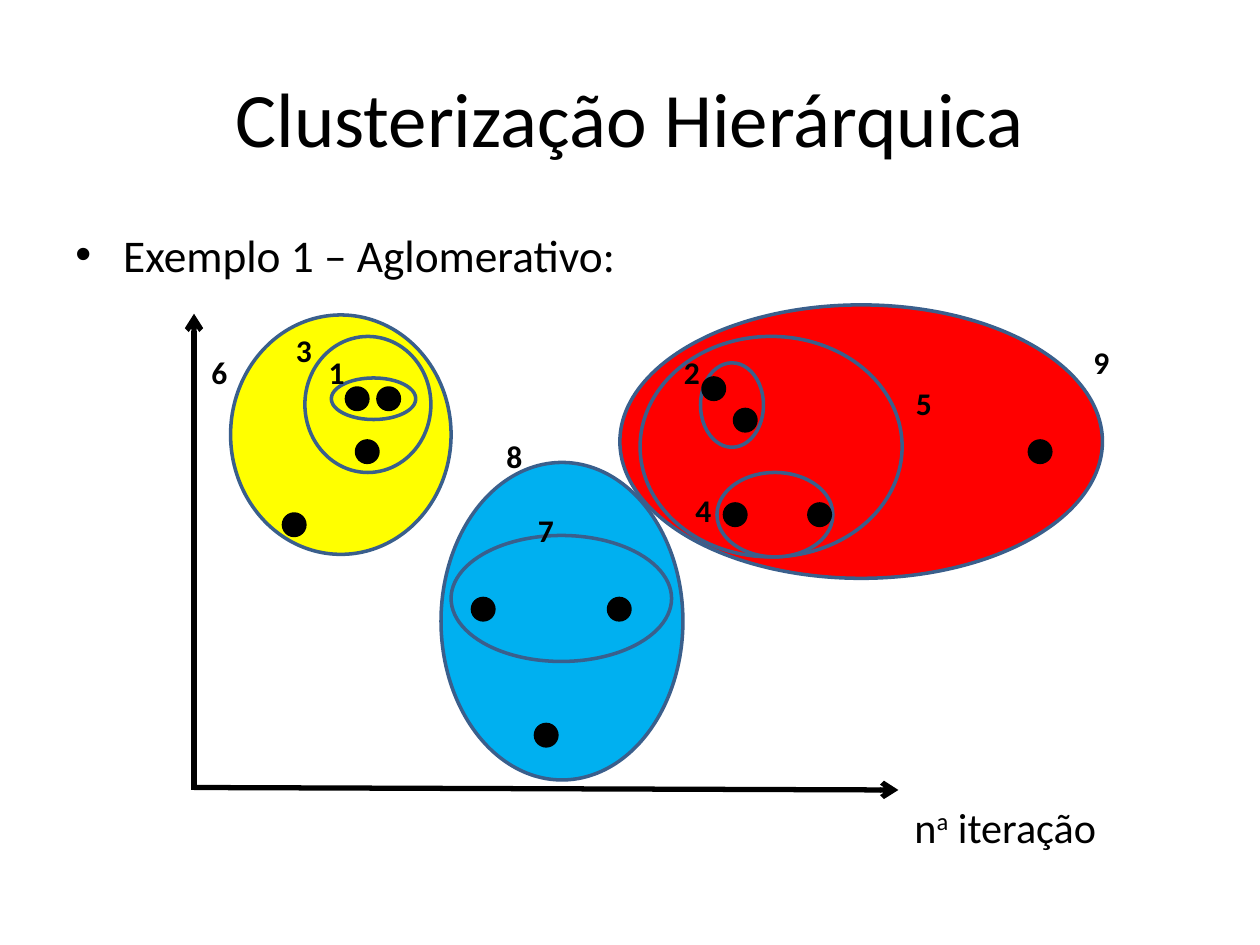
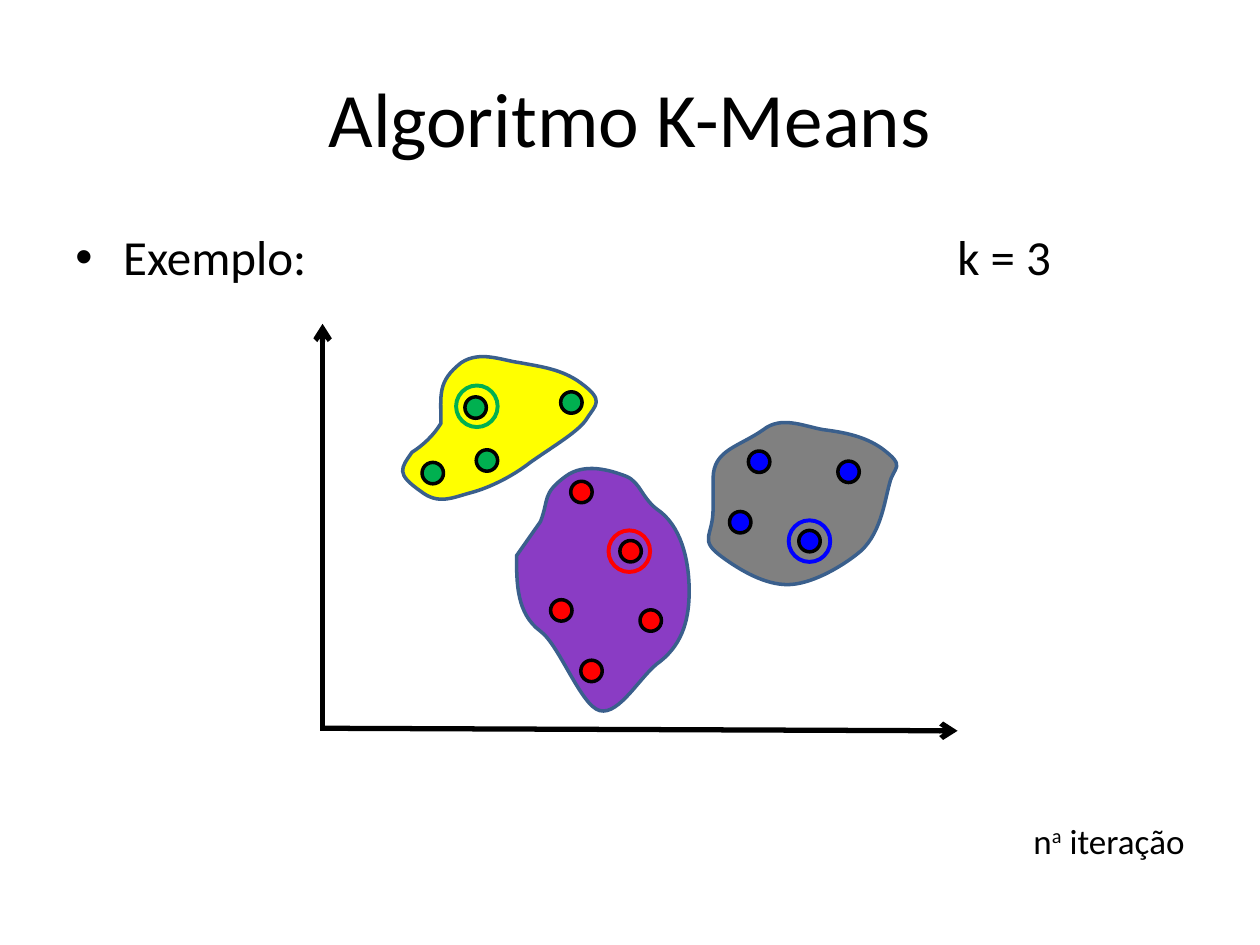
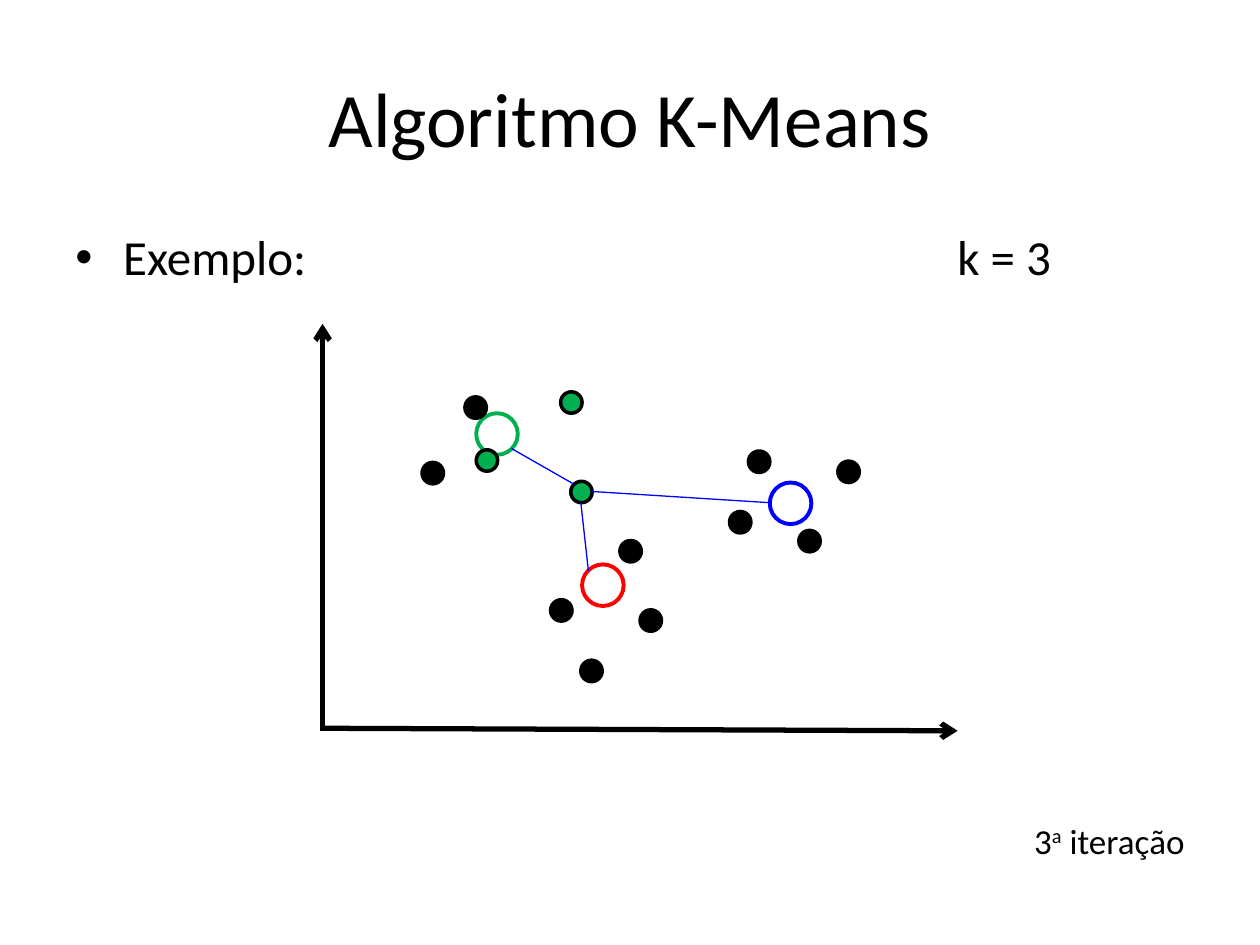
from lxml import etree
from pptx import Presentation
from pptx.dml.color import RGBColor
from pptx.enum.shapes import MSO_CONNECTOR, MSO_SHAPE
from pptx.enum.text import MSO_ANCHOR, PP_ALIGN
from pptx.oxml.ns import qn
from pptx.util import Inches, Pt

STRAIGHT = MSO_CONNECTOR.STRAIGHT
OVAL = MSO_SHAPE.OVAL
LEFT, CENTER, RIGHT = PP_ALIGN.LEFT, PP_ALIGN.CENTER, PP_ALIGN.RIGHT
TOP, MIDDLE = MSO_ANCHOR.TOP, MSO_ANCHOR.MIDDLE

FONT = "Calibri"
BLACK, YELLOW, SKY, RED = "000000", "FFFF00", "00B0F0", "FF0000"
GREEN, BLUE, GRAY, PURPLE = "00B050", "0000FF", "808080", "8A3CC4"
OUTLINE = "3A5F8C"
DOT, RING = 0.17, 0.33

CLUSTERS = [
    (3.5, 3.67, 1.92, 2.52, SKY),
    (3.58, 4.25, 1.75, 1, SKY),
    (4.92, 2.42, 3.83, 2.17, RED),
    (5.08, 2.67, 2.08, 1.75, RED),
    (1.83, 2.5, 1.75, 1.9, YELLOW),
    (5.69, 3.75, 0.92, 0.67, RED),
    (2.42, 2.67, 1, 1.08, YELLOW),
    (5.56, 2.88, 0.5, 0.67, RED),
    (2.63, 3, 0.67, 0.33, YELLOW),
]
HIERARCHY_DOTS = [
    (2.75, 3.08), (3, 3.08), (2.83, 3.5), (2.25, 4.08), (5.58, 3), (5.83, 3.25),
    (5.75, 4), (6.42, 4), (3.75, 4.75), (8.17, 3.5), (4.83, 4.75), (4.25, 5.75),
]
MERGE_LABELS = [
    ("1", 2.51, 2.75), ("2", 5.33, 2.75), ("3", 2.25, 2.58),
    ("4", 5.42, 3.85), ("9", 8.58, 2.67), ("5", 7.17, 3),
    ("7", 4.17, 4.01), ("8", 3.92, 3.42), ("6", 1.58, 2.75),
]

KMEANS_DOTS = {
    GREEN: [(3.69, 3.15), (4.45, 3.11), (3.78, 3.57), (3.35, 3.67)],
    RED: [(4.92, 4.29), (4.37, 4.76), (4.53, 3.82), (4.61, 5.24), (5.08, 4.84)],
    BLUE: [(6.34, 4.21), (5.79, 4.06), (5.94, 3.58), (6.65, 3.66)],
}
FIRST_CENTROIDS = {GREEN: (3.62, 3.06), RED: (4.83, 4.21), BLUE: (6.26, 4.13)}
THIRD_CENTROIDS = {GREEN: (3.78, 3.28), RED: (4.62, 4.48), BLUE: (6.11, 3.83)}
ASSIGNED_DOTS = [(4.45, 3.11), (3.78, 3.57), (4.53, 3.82)]
DISTANCES = [
    (4.67, 4.53, 4.61, 3.99),
    (6.11, 3.99, 4.69, 3.9),
    (4.06, 3.56, 4.55, 3.84),
]

REGIONS = [
    (YELLOW, (3.5, 3.36), [
        ((3.5, 3.13), (3.47, 3.03), (3.66, 2.88)),
        ((3.81, 2.78), (3.98, 2.86), (4.13, 2.88)),
        ((4.29, 2.91), (4.46, 2.93), (4.61, 3.04)),
        ((4.8, 3.18), (4.73, 3.21), (4.66, 3.32)),
        ((4.6, 3.42), (4.41, 3.53), (4.21, 3.67)),
        ((4.07, 3.78), (3.89, 3.87), (3.74, 3.91)),
        ((3.59, 3.95), (3.48, 4.01), (3.34, 3.9)),
        ((3.14, 3.76), (3.18, 3.72), (3.27, 3.59)),
        ((3.35, 3.54), (3.44, 3.46), (3.5, 3.36)),
    ]),
    (GRAY, (5.66, 3.8), [
        ((5.66, 3.57), (5.86, 3.55), (6.06, 3.41)),
        ((6.2, 3.3), (6.37, 3.38), (6.53, 3.41)),
        ((6.69, 3.43), (6.86, 3.46), (7, 3.56)),
        ((7.2, 3.71), (7.09, 3.7), (7.06, 3.84)),
        ((7.02, 3.98), (6.99, 4.26), (6.8, 4.4)),
        ((6.66, 4.51), (6.43, 4.64), (6.25, 4.64)),
        ((6.07, 4.64), (5.88, 4.53), (5.73, 4.42)),
        ((5.54, 4.28), (5.66, 4.26), (5.66, 4.04)),
    ]),
    (PURPLE, (4.29, 4.14), [
        ((4.36, 3.96), (4.3, 3.92), (4.49, 3.78)),
        ((4.64, 3.67), (4.84, 3.73), (4.97, 3.78)),
        ((5.09, 3.83), (5.09, 3.96), (5.24, 4.06)),
        ((5.43, 4.21), (5.47, 4.5), (5.47, 4.69)),
        ((5.47, 4.89), (5.43, 5.1), (5.24, 5.25)),
        ((5.09, 5.35), (4.92, 5.68), (4.76, 5.64)),
        ((4.61, 5.6), (4.44, 5.12), (4.29, 5.01)),
        ((4.1, 4.87), (4.1, 4.63), (4.1, 4.41)),
    ]),
]


def rgb(color):
    return RGBColor.from_string(color)


class Deck:
    def __init__(self):
        self.prs = Presentation()
        self.prs.slide_width, self.prs.slide_height = Inches(10), Inches(7.5)
        self.s = None

    def slide(self, title):
        self.s = self.prs.slides.add_slide(self.prs.slide_layouts[6])
        self.text(title, 0.5, 0.3, 9, 1.25, 44, align=CENTER, anchor=MIDDLE)

    def text(self, text, x, y, w, h, size, align=LEFT, anchor=TOP, bold=False):
        sp = self.s.shapes.add_textbox(Inches(x), Inches(y), Inches(w), Inches(h))
        tf = sp.text_frame
        tf.word_wrap = True
        tf.vertical_anchor = anchor
        p = tf.paragraphs[0]
        p.alignment = align
        self.run(p, text, size, bold)
        return tf

    def run(self, p, text, size, bold=False):
        r = p.add_run()
        r.text = text
        r.font.name, r.font.size, r.font.bold = FONT, Pt(size), bold
        r.font.color.rgb = rgb(BLACK)
        return r

    def body(self, lead, lead_size, number, size, gap, align=LEFT, margin=0):
        tf = self.text(lead, 0.5, 1.75, 9, 4.95, lead_size)
        pPr = tf.paragraphs[0]._p.get_or_add_pPr()
        pPr.set("marL", str(Inches(0.38)))
        pPr.set("indent", str(Inches(-0.38)))
        etree.SubElement(pPr, qn("a:buFont")).set("typeface", "Arial")
        etree.SubElement(pPr, qn("a:buChar")).set("char", "•")
        if "\t" in lead:
            tab = etree.SubElement(etree.SubElement(pPr, qn("a:tabLst")), qn("a:tab"))
            tab.set("pos", str(Inches(7)))
            tab.set("algn", "l")
        p = tf.add_paragraph()
        p.alignment = align
        p.space_before = Pt(gap)
        p._p.get_or_add_pPr().set("marL", str(Inches(margin)))
        self.run(p, number, size)
        ordinal = self.run(p, "a", size)
        ordinal._r.get_or_add_rPr().set("baseline", "30000")
        self.run(p, " iteração", size)

    def paint(self, sp, fill, line, weight):
        sp.shadow.inherit = False
        if fill:
            sp.fill.solid()
            sp.fill.fore_color.rgb = rgb(fill)
        else:
            sp.fill.background()
        sp.line.color.rgb = rgb(line)
        sp.line.width = Pt(weight)

    def ellipse(self, x, y, w, h, fill, line=OUTLINE, weight=2):
        sp = self.s.shapes.add_shape(OVAL, Inches(x), Inches(y), Inches(w), Inches(h))
        self.paint(sp, fill, line, weight)

    def dot(self, x, y, fill=BLACK):
        self.ellipse(x, y, DOT, DOT, fill, BLACK)

    def rings(self, centroids):
        for color, (x, y) in centroids.items():
            self.ellipse(x, y, RING, RING, None, color, 2.25)

    def region(self, fill, start, curves):
        builder = self.s.shapes.build_freeform(Inches(start[0]), Inches(start[1]))
        points = [(Inches(x), Inches(y)) for curve in curves for x, y in curve]
        builder.add_line_segments(points, close=True)
        sp = builder.convert_to_shape()
        segments = list(sp._element.iter(qn("a:lnTo")))
        for i in range(0, len(points), 3):
            curve = etree.Element(qn("a:cubicBezTo"))
            segments[i].addprevious(curve)
            for segment in segments[i:i + 3]:
                curve.append(segment[0])
                segment.getparent().remove(segment)
        self.paint(sp, fill, OUTLINE, 2)

    def line(self, x1, y1, x2, y2, color, weight, arrow=False):
        sp = self.s.shapes.add_connector(STRAIGHT, Inches(x1), Inches(y1), Inches(x2), Inches(y2))
        sp.line.color.rgb = rgb(color)
        sp.line.width = Pt(weight)
        if arrow:
            ln = sp._element.spPr.find(qn("a:ln"))
            etree.SubElement(ln, qn("a:tailEnd")).set("type", "arrow")
        etree.SubElement(sp._element.spPr, qn("a:effectLst"))

    def axes(self, x, y, top, right):
        self.line(x, y, x, top, BLACK, 3, arrow=True)
        self.line(x, y - 0.02, right, y, BLACK, 3, arrow=True)

    def kmeans_slide(self, number):
        self.slide("Algoritmo K-Means")
        self.body("Exemplo:\tk = 3", 28, number, 20, 305, align=RIGHT)
        self.axes(2.56, 5.8, 2.57, 7.6)


def hierarchy(deck):
    deck.slide("Clusterização Hierárquica")
    deck.body("Exemplo 1 – Aglomerativo:", 25.9, "n", 24.1, 297, margin=6.66)
    deck.axes(1.54, 6.27, 2.49, 7.13)
    for cluster in CLUSTERS:
        deck.ellipse(*cluster)
    for x, y in HIERARCHY_DOTS:
        deck.dot(x, y)
    for label, x, y in MERGE_LABELS:
        deck.text(label, x, y, 0.25, 0.4, 18, bold=True)


def kmeans_final(deck):
    deck.kmeans_slide("n")
    for region in REGIONS:
        deck.region(*region)
    deck.rings(FIRST_CENTROIDS)
    for color, dots in KMEANS_DOTS.items():
        for x, y in dots:
            deck.dot(x, y, color)


def kmeans_third(deck):
    deck.kmeans_slide("3")
    deck.rings(THIRD_CENTROIDS)
    for dots in KMEANS_DOTS.values():
        for x, y in dots:
            deck.dot(x, y, GREEN if (x, y) in ASSIGNED_DOTS else BLACK)
    for distance in DISTANCES:
        deck.line(*distance, BLUE, 0.75)


def main():
    deck = Deck()
    hierarchy(deck)
    kmeans_final(deck)
    kmeans_third(deck)
    deck.prs.save("out.pptx")


if __name__ == "__main__":
    main()
